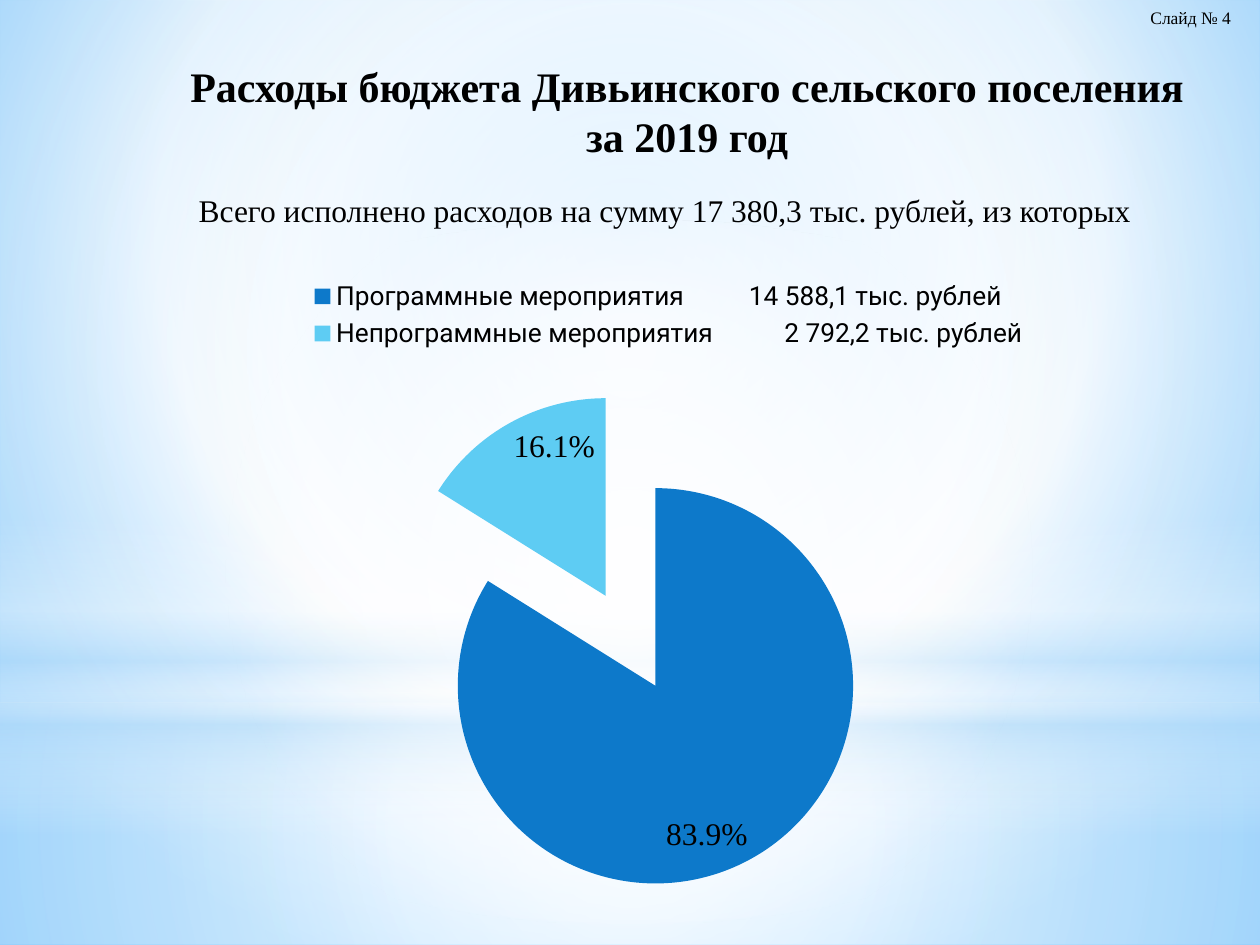
from pptx import Presentation, util as u
from pptx.chart.data import CategoryChartData
from pptx.dml.color import RGBColor
from pptx.enum import chart as c, shapes, text
from pptx.oxml import parse_xml
from pptx.oxml.ns import nsdecls, qn

BLACK = RGBColor(0x00, 0x00, 0x00)
BLUE = RGBColor(0x0D, 0x79, 0xCA)
SKY = RGBColor(0x5E, 0xCC, 0xF3)
WHITE = RGBColor(0xFF, 0xFF, 0xFF)
PALE = RGBColor(0xB4, 0xDC, 0xFA)
LIGHT = RGBColor(0x9E, 0xD5, 0xFF)
DEEP = RGBColor(0x5B, 0xB9, 0xFF)
SERIF, SANS = "Times New Roman", "Roboto"
WIDTH, HEIGHT = 1260, 945
CENTRE = (50, 50, 50, 50)
RECT, OVAL = shapes.MSO_SHAPE.RECTANGLE, shapes.MSO_SHAPE.OVAL

# Gradient stops: position %, colour, opacity %; focus None means top to bottom
BACKGROUND = [(0, LIGHT, 100), (60, WHITE, 100), (100, DEEP, 100)]
BACKGROUND_FOCUS = (20, 10, 20, 60)
BACKDROP = [
    (RECT, (0, 703, WIDTH, 242), CENTRE, [(0, WHITE, 91), (37, WHITE, 76), (100, PALE, 79)]),
    (RECT, (0, 0, WIDTH, 703), CENTRE, [(0, WHITE, 89), (48, WHITE, 62), (100, PALE, 79)]),
    (RECT, (0, 519, WIDTH, 315), None,
     [(0, WHITE, 0), (29, WHITE, 30), (45, PALE, 40), (55, WHITE, 26), (65, PALE, 60),
      (100, WHITE, 0)]),
    (OVAL, (0, 220, WIDTH, 703), CENTRE, [(0, WHITE, 100), (56, WHITE, 0)]),
]

# Text, place, size, bold, alignment, anchor
CENTER, LEFT = text.PP_ALIGN.CENTER, text.PP_ALIGN.LEFT
MIDDLE, TOP = text.MSO_ANCHOR.MIDDLE, text.MSO_ANCHOR.TOP
TEXTS = [
    ("Расходы бюджета Дивьинского сельского поселения за 2019 год",
     (174, 53, 1026, 116), 24, True, CENTER, MIDDLE),
    ("Всего исполнено расходов на сумму 17 380,3 тыс. рублей, из которых",
     (154, 185, 1022, 50), 18, False, CENTER, TOP),
    ("Слайд № 4", (1138, 1, 122, 34), 10, False, LEFT, TOP),
]

# Category, share %, colour
EXPENSES = [
    ("Программные мероприятия          14 588,1 тыс. рублей", 83.9, BLUE),
    ("Непрограммные мероприятия           2 792,2 тыс. рублей", 16.1, SKY),
]
CHART_PLACE = (105, 275, 1095, 615)
PLOT_LAYOUT = (0.12, 0.19, 0.72, 0.81)
LEGEND_LAYOUT = (0.18, 0.0, 0.67, 0.13)
EXPLOSION = 26


def px(*lengths):
    return [u.Inches(length / 126) for length in lengths]


def set_gradient(owner, fill, stops, focus):
    fill.gradient()
    marks = "".join(
        f'<a:gs pos="{pos * 1000}"><a:srgbClr val="{color}">'
        f'<a:alpha val="{alpha * 1000}"/></a:srgbClr></a:gs>'
        for pos, color, alpha in stops)
    if focus:
        sides = " ".join(f'{side}="{part * 1000}"' for side, part in zip("ltrb", focus))
        way = f'<a:path path="circle"><a:fillToRect {sides}/></a:path>'
    else:
        way = '<a:lin ang="5400000" scaled="0"/>'
    old = owner.find(".//" + qn("a:gradFill"))
    old.getparent().replace(old, parse_xml(
        f'<a:gradFill {nsdecls("a")} rotWithShape="1"><a:gsLst>{marks}</a:gsLst>{way}</a:gradFill>'))


def manual_layout(parts, inner=False):
    target = '<c:layoutTarget val="inner"/>' if inner else ""
    modes = '<c:xMode val="edge"/><c:yMode val="edge"/>'
    sizes = "".join(f'<c:{name} val="{part}"/>' for name, part in zip("xywh", parts))
    return parse_xml(f'<c:layout {nsdecls("c")}><c:manualLayout>{target}{modes}{sizes}'
                     '</c:manualLayout></c:layout>')


def set_layout(parent, before, layout):
    for old in parent.findall(qn("c:layout")):
        parent.remove(old)
    parent.find(qn(before)).addprevious(layout)


def explosion():
    return parse_xml(f'<c:explosion {nsdecls("c")} val="{EXPLOSION}"/>')


def style_font(font, name, size):
    font.name, font.size = name, u.Pt(size)
    font.color.rgb = BLACK


def add_text(page, words, place, size, bold, align, anchor):
    frame = page.shapes.add_textbox(*px(*place)).text_frame
    frame.word_wrap = True
    frame.vertical_anchor = anchor
    para = frame.paragraphs[0]
    para.text, para.alignment = words, align
    style_font(para.font, SERIF, size)
    para.font.bold = bold


def add_pie(page):
    data = CategoryChartData()
    data.categories = [name for name, _, _ in EXPENSES]
    data.add_series("Series 1", [share for _, share, _ in EXPENSES])
    chart = page.shapes.add_chart(c.XL_CHART_TYPE.PIE, *px(*CHART_PLACE), data).chart
    chart.has_title = False
    style_font(chart.font, SANS, 18)
    plot = chart.plots[0]
    plot.vary_by_categories = True

    # Slices, pulled apart
    series = plot.series[0]
    for index, (_, _, color) in enumerate(EXPENSES):
        fill = series.points[index].format.fill
        fill.solid()
        fill.fore_color.rgb = color
    slices = series._element.findall(qn("c:dPt"))
    slices[0].addprevious(explosion())
    for piece in slices:
        piece.find(qn("c:spPr")).addprevious(explosion())

    # Percent labels
    labels = series.data_labels
    labels.show_percentage, labels.show_value = True, False
    labels.number_format, labels.number_format_is_linked = "0.0%", False
    labels.position = c.XL_LABEL_POSITION.INSIDE_END
    style_font(labels.font, SERIF, 18)

    # Legend above the pie
    chart.has_legend = True
    legend = chart.legend
    legend.position = c.XL_LEGEND_POSITION.RIGHT
    legend.include_in_layout = False
    style_font(legend.font, SANS, 15)
    set_layout(legend._element, "c:overlay", manual_layout(LEGEND_LAYOUT))
    area = chart._chartSpace.find(".//" + qn("c:plotArea"))
    set_layout(area, "c:pieChart", manual_layout(PLOT_LAYOUT, inner=True))


def main():
    deck = Presentation()
    deck.slide_width, deck.slide_height = px(WIDTH, HEIGHT)
    page = deck.slides.add_slide(deck.slide_layouts[6])

    # Background and soft light layers
    set_gradient(page.element, page.background.fill, BACKGROUND, BACKGROUND_FOCUS)
    for kind, place, focus, stops in BACKDROP:
        layer = page.shapes.add_shape(kind, *px(*place))
        layer.shadow.inherit = False
        layer.line.fill.background()
        set_gradient(layer.element, layer.fill, stops, focus)

    # Chart and texts
    add_pie(page)
    for item in TEXTS:
        add_text(page, *item)
    deck.save("out.pptx")


if __name__ == "__main__":
    main()
